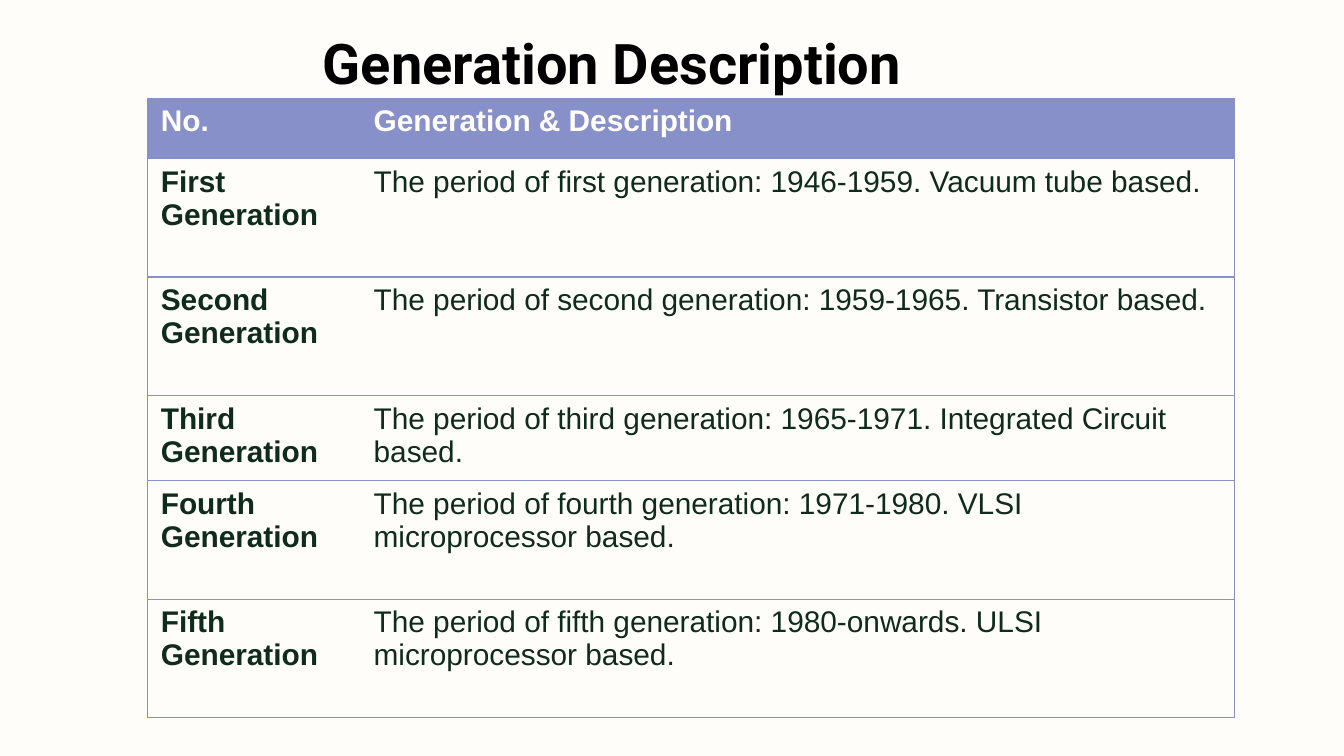
from pptx import Presentation
from pptx.util import Pt
from pptx.dml.color import RGBColor
from pptx.enum.text import PP_ALIGN
from pptx.oxml import parse_xml
from pptx.oxml.ns import nsdecls

PAPER, LAVENDER, GREEN, BLACK = "FFFDF9", "8890C9", "0F2B1C", "000000"


def color(value):
    return RGBColor.from_string(value)


def add_text(para, text, font, size, ink, bold):
    span = para.add_run()
    span.text = text
    span.font.name = font
    span.font.size = Pt(size)
    span.font.bold = bold
    span.font.color.rgb = color(ink)


deck = Presentation()
deck.slide_width, deck.slide_height = Pt(720), Pt(405)
page = deck.slides.add_slide(deck.slide_layouts[6])
page.background.fill.solid()
page.background.fill.fore_color.rgb = color(PAPER)

# Title
title = page.shapes.add_textbox(Pt(0), Pt(8.6), Pt(656), Pt(58)).text_frame
title.word_wrap = True
title.margin_top = Pt(6.5)
title.paragraphs[0].alignment = PP_ALIGN.CENTER
add_text(title.paragraphs[0], "Generation Description", "Roboto", 30, BLACK, True)

# Table grid
rows = [
    ("No.", "Generation & Description"),
    ("First Generation", "The period of first generation: 1946-1959. Vacuum tube based."),
    ("Second Generation", "The period of second generation: 1959-1965. Transistor based."),
    ("Third Generation", "The period of third generation: 1965-1971. Integrated Circuit based."),
    ("Fourth Generation", "The period of fourth generation: 1971-1980. VLSI microprocessor based."),
    ("Fifth Generation", "The period of fifth generation: 1980-onwards. ULSI microprocessor based."),
]
widths = [114, 468.5]
heights = [32.2, 63.5, 63.5, 44.5, 63.5, 63.5]
table = page.shapes.add_table(len(rows), len(widths), Pt(79), Pt(52.7),
                              Pt(sum(widths)), Pt(sum(heights))).table
table.first_row = table.horz_banding = False
for column, width in zip(table.columns, widths):
    column.width = Pt(width)
for row, height in zip(table.rows, heights):
    row.height = Pt(height)

# Cells: ruled rows and outer frame, with no line between the columns
for row_index, texts in enumerate(rows):
    header = row_index == 0
    for column_index, text in enumerate(texts):
        cell = table.cell(row_index, column_index)
        hidden_side = "R" if column_index == 0 else "L"
        for side in "LRTB":
            paint = ("<a:noFill/>" if side == hidden_side else
                     f'<a:solidFill><a:srgbClr val="{LAVENDER}"/></a:solidFill>')
            cell._tc.get_or_add_tcPr().append(parse_xml(
                f'<a:ln{side} {nsdecls("a")} w="{Pt(0.75)}">{paint}</a:ln{side}>'))
        cell.fill.solid()
        cell.fill.fore_color.rgb = color(LAVENDER if header else PAPER)
        add_text(cell.text_frame.paragraphs[0], text, "Arial", 16,
                 PAPER if header else GREEN, header or column_index == 0)

deck.save("out.pptx")
